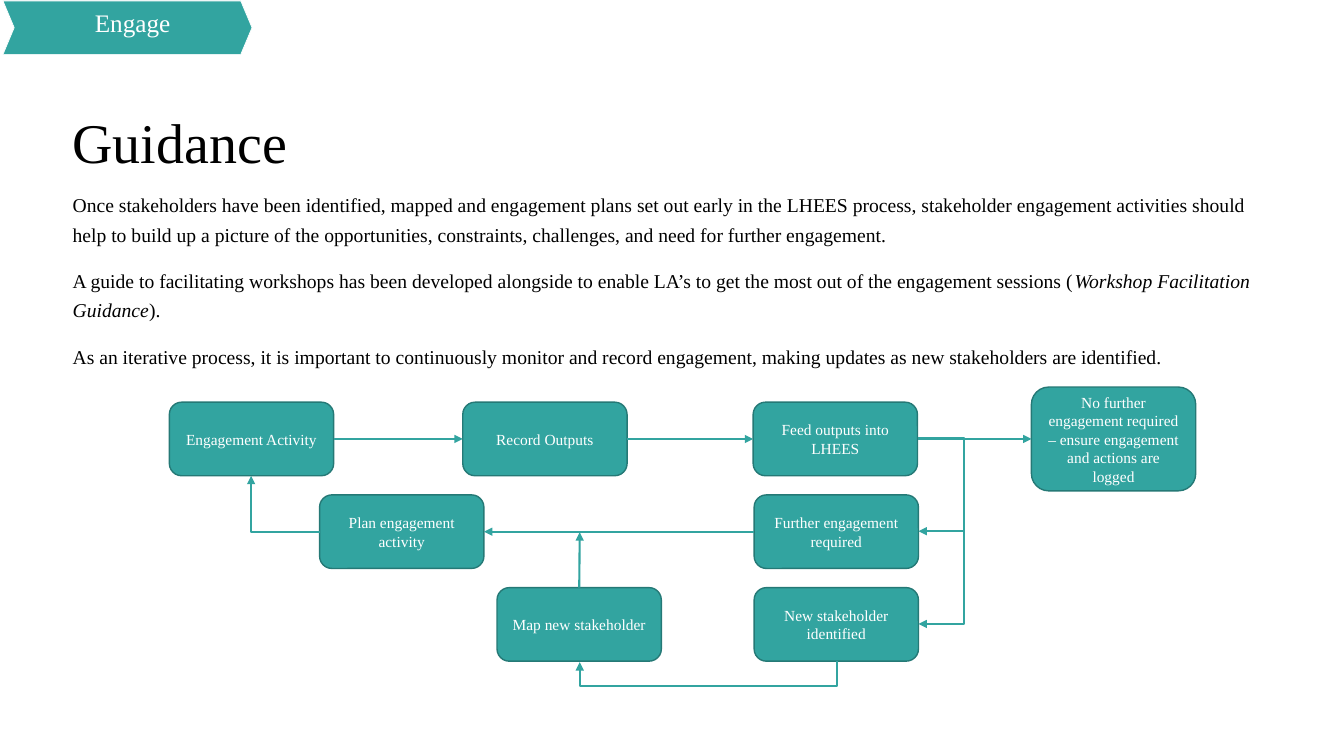
"""Build the Guidance slide with its stakeholder engagement flow chart."""
from lxml import etree
from pptx import Presentation
from pptx import util as u
from pptx.dml.color import RGBColor
from pptx.enum import shapes, text
from pptx.oxml.ns import qn

TEAL = RGBColor(0x32, 0xA4, 0xA0)
DARK_TEAL = RGBColor(0x25, 0x79, 0x76)
WHITE = RGBColor(0xFF, 0xFF, 0xFF)
BLACK = RGBColor(0, 0, 0)
FONT = "Times New Roman"
TOP, LEFT, BOTTOM, RIGHT = range(4)

BOX_W, BOX_H = 1.63, 0.73
ROWS = [3.99 + 0.92 * i for i in range(3)]
BODY = [
    [("Once stakeholders have been identified, mapped and engagement plans set out early in the "
      "LHEES process, stakeholder engagement activities should help to build up a picture of the "
      "opportunities, constraints, challenges, and need for further engagement.", False)],
    [("A guide to facilitating workshops has been developed alongside to enable LA’s to get the "
      "most out of the engagement sessions (", False),
     ("Workshop Facilitation Guidance", True),
     (").", False)],
    [("As an iterative process, it is important to continuously monitor and record engagement, "
      "making updates as new stakeholders are identified.", False)],
]


class Deck:
    """Hold the style and the current slide."""

    def __init__(self):
        self.prs = Presentation()
        self.prs.slide_width = u.Inches(13.33)
        self.prs.slide_height = u.Inches(7.5)
        self.s = self.prs.slides.add_slide(self.prs.slide_layouts[5])

    def run(self, p, words, size, color, italic=False):
        r = p.add_run()
        r.text = words
        r.font.name, r.font.size, r.font.italic = FONT, u.Pt(size), italic
        r.font.color.rgb = color

    def frame(self, sp, insets, anchor):
        tf = sp.text_frame
        tf.word_wrap = True
        tf.auto_size = text.MSO_AUTO_SIZE.NONE
        tf.vertical_anchor = anchor
        tf.margin_left, tf.margin_top, tf.margin_right, tf.margin_bottom = map(u.Inches, insets)
        return tf

    def title(self, words, x, y, w, h):
        sp = self.s.shapes.title
        sp.left, sp.top, sp.width, sp.height = map(u.Inches, (x, y, w, h))
        p = self.frame(sp, (0, 0, 0, 0), text.MSO_ANCHOR.TOP).paragraphs[0]
        p.alignment = text.PP_ALIGN.LEFT
        p.line_spacing = u.Pt(44)
        self.run(p, words, 40, BLACK)

    def body(self, paragraphs, x, y, w, h):
        sp = self.s.shapes.add_textbox(*map(u.Inches, (x, y, w, h)))
        tf = self.frame(sp, (0, 0, 0, 0), text.MSO_ANCHOR.TOP)
        for i, runs in enumerate(paragraphs):
            p = tf.add_paragraph() if i else tf.paragraphs[0]
            p.line_spacing, p.space_after = u.Pt(21), u.Pt(12)
            for words, italic in runs:
                self.run(p, words, 14, BLACK, italic)

    def shape(self, kind, words, x, y, w, h, size, line, width, insets):
        sp = self.s.shapes.add_shape(kind, *map(u.Inches, (x, y, w, h)))
        sp.shadow.inherit = False
        sp.fill.solid()
        sp.fill.fore_color.rgb = TEAL
        sp.line.color.rgb = line
        sp.line.width = u.Pt(width)
        p = self.frame(sp, insets, text.MSO_ANCHOR.MIDDLE).paragraphs[0]
        p.alignment = text.PP_ALIGN.CENTER
        self.run(p, words, size, WHITE)
        return sp

    def banner(self, words, x, y, w, h):
        sp = self.shape(shapes.MSO_SHAPE.CHEVRON, words, x, y, w, h, 18, WHITE, 0.5,
                        (0.2, 0, 0.1, 0.1))
        sp.adjustments[0] = 0.21

    def box(self, words, x, y, h=BOX_H):
        return self.shape(shapes.MSO_SHAPE.ROUNDED_RECTANGLE, words, x, y, BOX_W, h, 11,
                          DARK_TEAL, 1, (0.1, 0.05, 0.1, 0.05))

    def connector(self, kind, x1, y1, x2, y2):
        c = self.s.shapes.add_connector(kind, *map(u.Inches, (x1, y1, x2, y2)))
        c.line.color.rgb = TEAL
        c.line.width = u.Pt(1.5)
        etree.SubElement(c.line._get_or_add_ln(), qn("a:tailEnd"), type="triangle")
        etree.SubElement(c._element.spPr, qn("a:effectLst"))
        return c

    def arrow(self, start, side, end, end_side):
        c = self.connector(shapes.MSO_CONNECTOR.STRAIGHT, 0, 0, 0, 0)
        c.begin_connect(start, side)
        c.end_connect(end, end_side)

    def arrow_to(self, start, side, x, y):
        c = self.connector(shapes.MSO_CONNECTOR.STRAIGHT, x, y, x, y)
        c.begin_connect(start, side)

    def elbow(self, x, y, w, h, rotation=0, bend=None):
        c = self.connector(shapes.MSO_CONNECTOR.ELBOW, x, y, x + w, y + h)
        c.rotation = rotation
        geom = c._element.spPr.find(qn("a:prstGeom"))
        if bend is None:
            geom.set("prst", "bentConnector2")
        else:
            guides = geom.find(qn("a:avLst"))
            if guides is None:
                guides = etree.SubElement(geom, qn("a:avLst"))
            etree.SubElement(guides, qn("a:gd"), name="adj1",
                             fmla=f"val {round(bend / w * 100000)}")


def main():
    d = Deck()
    d.title("Guidance", 0.72, 1.12, 9.87, 0.58)
    d.body(BODY, 0.72, 1.86, 11.89, 4.76)
    d.banner("Engage", 0.03, 0.01, 2.47, 0.53)

    activity = d.box("Engagement Activity", 1.68, ROWS[0])
    record = d.box("Record Outputs", 4.59, ROWS[0])
    feed = d.box("Feed outputs into LHEES", 7.47, ROWS[0])
    done = d.box("No further engagement required – ensure engagement and actions are logged",
                 10.23, ROWS[0] - 0.15, BOX_H + 0.3)
    plan = d.box("Plan engagement activity", 3.17, ROWS[1])
    further = d.box("Further engagement required", 7.48, ROWS[1])
    mapping = d.box("Map new stakeholder", 4.93, ROWS[2])
    d.box("New stakeholder identified", 7.48, ROWS[2])

    for start, end in ((activity, record), (record, feed), (feed, done)):
        d.arrow(start, RIGHT, end, LEFT)
    d.arrow(further, LEFT, plan, RIGHT)
    d.arrow_to(mapping, TOP, 5.75, 5.28)
    d.elbow(7.02, 5.29, 0.01, 2.55, rotation=90, bend=0.25)
    d.elbow(2.49, 4.72, 0.68, 0.56, rotation=180)
    for row in (1, 2):
        d.elbow(9.1, 4.35, 0.01, ROWS[row] - ROWS[0], bend=0.47)
    d.prs.save("out.pptx")


if __name__ == "__main__":
    main()
